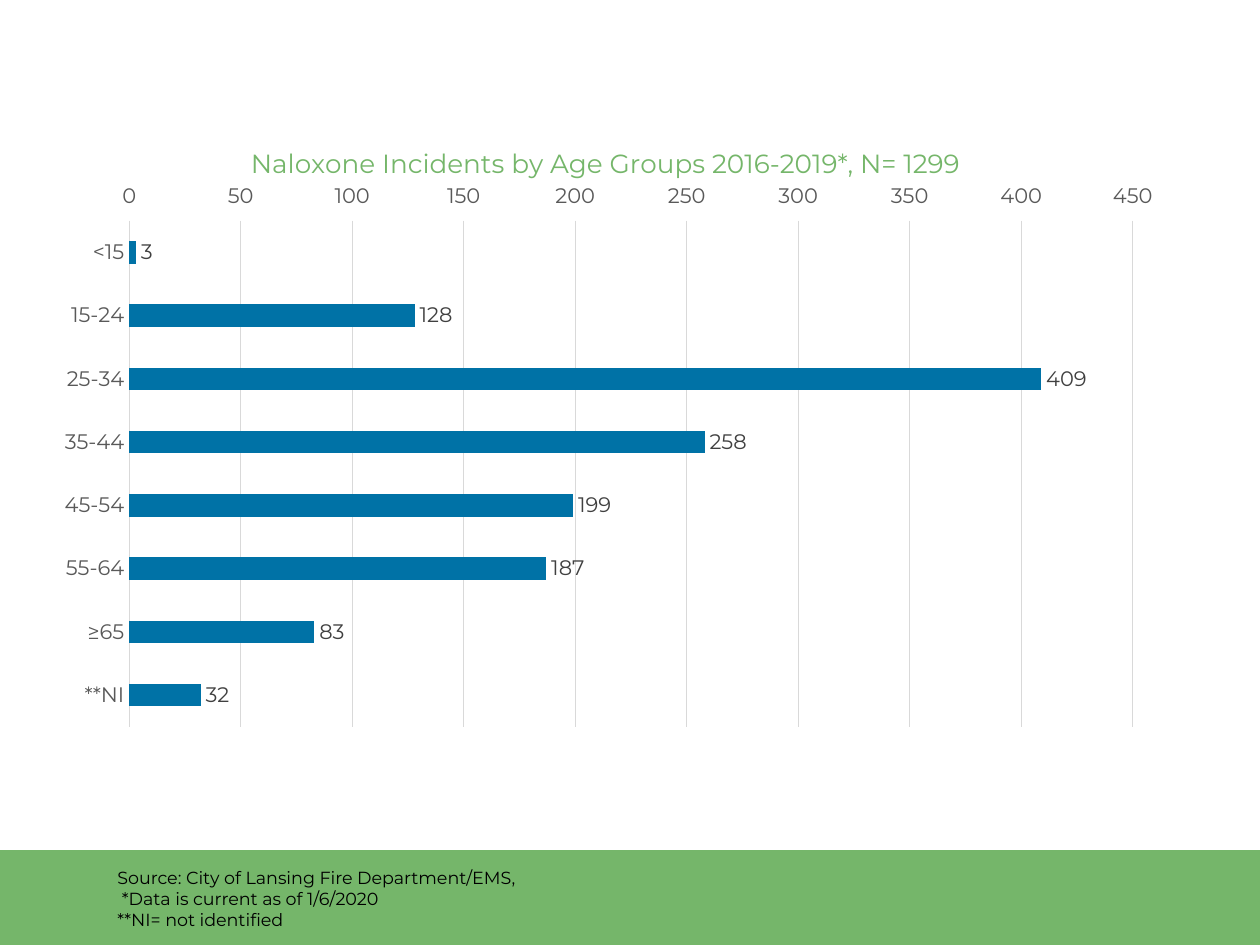
from lxml.etree import SubElement
from pptx import Presentation
from pptx.chart.data import CategoryChartData
from pptx.dml.color import RGBColor
from pptx.enum.chart import (XL_CHART_TYPE, XL_LABEL_POSITION, XL_TICK_LABEL_POSITION,
                             XL_TICK_MARK)
from pptx.enum.shapes import MSO_SHAPE
from pptx.oxml.ns import qn
from pptx.util import Emu, Pt

PX = 914400 // 126
FONT = "Montserrat"
GREEN, BLUE, GRID = "75B66A", "0072A6", "D9D9D9"

INCIDENTS = {"**NI": 32, "≥65": 83, "55-64": 187, "45-54": 199,
             "35-44": 258, "25-34": 409, "15-24": 128, "<15": 3}
NOTES = ["Source: City of Lansing Fire Department/EMS,",
         " *Data is current as of 1/6/2020",
         "**NI= not identified"]


def box(*lengths):
    return [Emu(length * PX) for length in lengths]


def rgb(color):
    return RGBColor.from_string(color)


def style(font, size, color):
    font.name, font.size, font.bold = FONT, Pt(size), False
    font.color.rgb = rgb(color)


def style_line(line, color):
    line.color.rgb = rgb(color)
    line.width = Pt(0.75)


def place(element, index, **fractions):
    """Fix the position of a chart part, in fractions of the chart."""
    for old_layout in element.findall(qn("c:layout")):
        element.remove(old_layout)
    layout = SubElement(element, qn("c:layout"))
    element.insert(index, layout)
    manual = SubElement(layout, qn("c:manualLayout"))
    if "w" in fractions:
        SubElement(manual, qn("c:layoutTarget")).set("val", "inner")
    for side in "xy":
        SubElement(manual, qn(f"c:{side}Mode")).set("val", "edge")
    for key, value in fractions.items():
        SubElement(manual, qn(f"c:{key}")).set("val", str(value))


def add_footer_band(slide):
    band = slide.shapes.add_shape(MSO_SHAPE.RECTANGLE, *box(0, 850, 1260, 95))
    band.shadow.inherit = False
    band.fill.solid()
    band.fill.fore_color.rgb = rgb(GREEN)
    band.line.fill.background()


def add_age_chart(slide):
    data = CategoryChartData()
    data.categories = list(INCIDENTS)
    data.add_series("Series 1", list(INCIDENTS.values()))
    chart = slide.shapes.add_chart(XL_CHART_TYPE.BAR_CLUSTERED,
                                   *box(42, 116, 1134, 624), data).chart
    style(chart.font, 10, "000000")
    chart.has_legend = False

    # Title
    title = chart.chart_title
    title.text_frame.text = "Naloxone Incidents by Age Groups 2016-2019*, N= 1299"
    style(title.text_frame.paragraphs[0].runs[0].font, 15, GREEN)
    place(title._element, 1, x=0.18, y=0.04)
    place(chart._chartSpace.chart.plotArea, 0, x=0.077, y=0.168, w=0.885, h=0.811)

    # Axes, with the counts along the top
    ages, counts = chart.category_axis, chart.value_axis
    for axis in (ages, counts):
        axis.major_tick_mark = axis.minor_tick_mark = XL_TICK_MARK.NONE
        style(axis.tick_labels.font, 12, "595959")
    style_line(ages.format.line, GRID)
    counts.format.line.fill.background()
    counts.tick_label_position = XL_TICK_LABEL_POSITION.HIGH
    counts.minimum_scale, counts.maximum_scale, counts.major_unit = 0, 450, 50
    style_line(counts.major_gridlines.format.line, GRID)

    # Bars and their values
    plot = chart.plots[0]
    plot.gap_width = 182
    plot.vary_by_categories = False
    bars = plot.series[0]
    bars.format.fill.solid()
    bars.format.fill.fore_color.rgb = rgb(BLUE)
    labels = bars.data_labels
    labels.show_value = True
    labels.position = XL_LABEL_POSITION.OUTSIDE_END
    style(labels.font, 12, "404040")


def add_notes(slide):
    frame = slide.shapes.add_textbox(*box(105, 861, 1018, 77)).text_frame
    frame.word_wrap = True
    frame.text = "\n".join(NOTES)
    for paragraph in frame.paragraphs:
        style(paragraph.runs[0].font, 10, "000000")


def main():
    deck = Presentation()
    deck.slide_width, deck.slide_height = box(1260, 945)
    slide = deck.slides.add_slide(deck.slide_layouts[6])
    add_footer_band(slide)
    add_age_chart(slide)
    add_notes(slide)
    deck.save("out.pptx")


if __name__ == "__main__":
    main()
